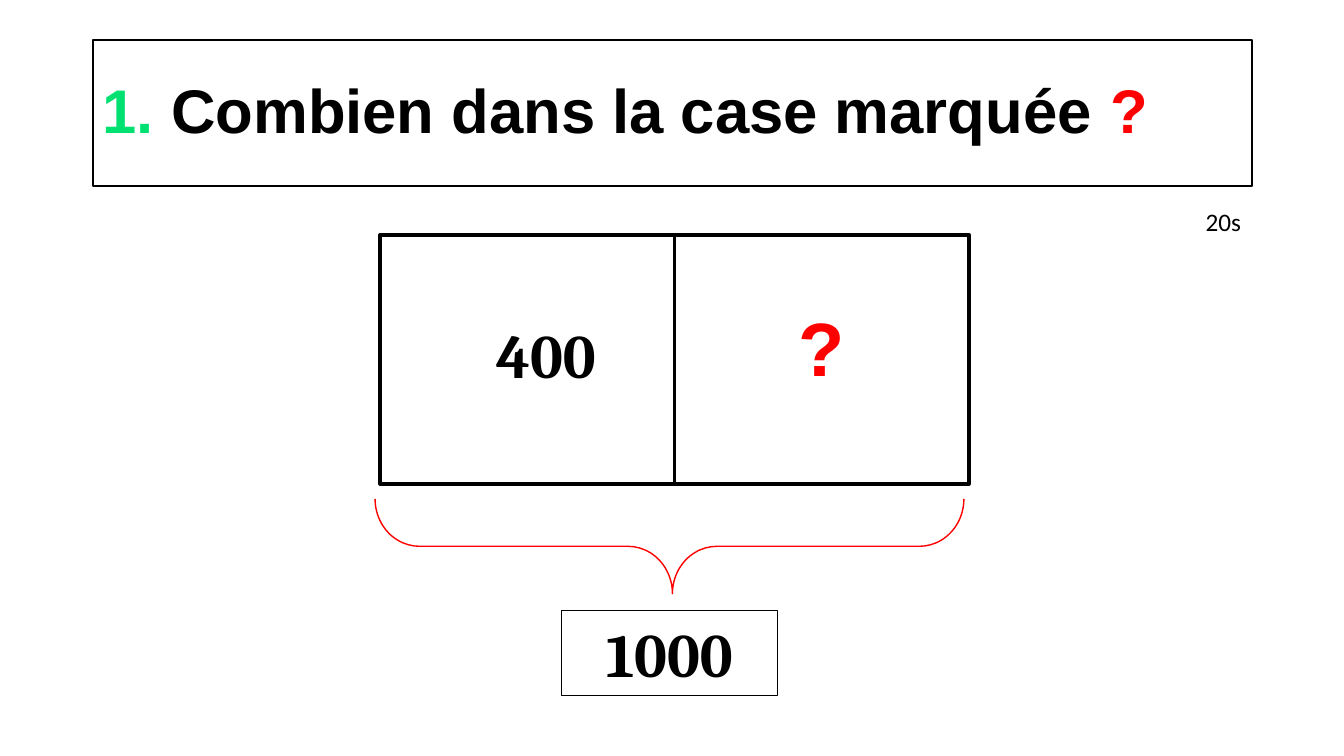
from dataclasses import dataclass

from pptx import Presentation
from pptx.dml.color import RGBColor
from pptx.enum.shapes import MSO_SHAPE as Shape
from pptx.enum.text import MSO_ANCHOR as Anchor, PP_ALIGN as Align
from pptx.util import Emu, Pt

PX = 9144  # 100 px to the inch


@dataclass(frozen=True)
class Theme:
    black: RGBColor = RGBColor(0x00, 0x00, 0x00)
    red: RGBColor = RGBColor(0xFF, 0x00, 0x00)
    green: RGBColor = RGBColor(0x00, 0xE1, 0x72)
    heading_font: str = "Arial"
    number_font: str = "Cambria"
    note_font: str = "Calibri"
    large: int = 44
    mark: int = 54
    note: int = 18


class SlideBuilder:
    def __init__(self, slide, theme):
        self.slide = slide
        self.theme = theme

    def outline(self, kind, box, color, weight):
        """Add an unfilled preset shape; box is left, top, width, height in px."""
        shape = self.slide.shapes.add_shape(kind, *(Emu(n * PX) for n in box))
        shape.shadow.inherit = False
        shape.fill.background()
        shape.line.color.rgb = color
        shape.line.width = Pt(weight)
        return shape

    def text(self, box, runs, font, size, bold=True, align=Align.CENTER,
             anchor=Anchor.TOP, wrap=True, spacing=1.0, border=None):
        """Add a text box from (text, color) runs, with an optional black border."""
        shape = self.slide.shapes.add_textbox(*(Emu(n * PX) for n in box))
        if border:
            shape.line.color.rgb = self.theme.black
            shape.line.width = Pt(border)
        frame = shape.text_frame
        frame.word_wrap = wrap
        frame.vertical_anchor = anchor
        paragraph = frame.paragraphs[0]
        paragraph.alignment = align
        paragraph.line_spacing = spacing
        for words, color in runs:
            run = paragraph.add_run()
            run.text = words
            run.font.name = font
            run.font.size = Pt(size)
            run.font.bold = bold
            run.font.color.rgb = color

    def brace_below(self, box):
        """Add a downward brace; box is the area it covers once turned."""
        left, top, width, height = box
        shift = (width - height) // 2
        brace = self.outline(Shape.RIGHT_BRACE,
                             (left + shift, top - shift, height, width),
                             self.theme.red, 1)
        brace.rotation = 90
        brace.adjustments[0] = 0.47
        brace.adjustments[1] = 0.495


def main():
    presentation = Presentation()
    presentation.slide_width = Emu(1333 * PX)
    presentation.slide_height = Emu(750 * PX)
    slide = presentation.slides.add_slide(presentation.slide_layouts[6])
    theme = Theme()
    builder = SlideBuilder(slide, theme)

    title = [("1. ", theme.green),
             ("Combien dans la case marquée ", theme.black),
             ("?", theme.red)]
    builder.text((92, 40, 1150, 145), title, theme.heading_font, theme.large,
                 align=Align.LEFT, anchor=Anchor.MIDDLE, spacing=0.9, border=1.5)

    cell_width = 292
    for column in range(2):
        builder.outline(Shape.RECTANGLE,
                        (377 + column * cell_width, 233, cell_width, 247),
                        theme.black, 2.5)
    builder.text((470, 310, 143, 86), [("400", theme.black)],
                 theme.number_font, theme.large)
    builder.brace_below((372, 495, 2 * cell_width, 94))
    builder.text((557, 606, 214, 84), [("1000", theme.black)],
                 theme.number_font, theme.large, border=0.75)
    builder.text((737, 294, 156, 101), [("?", theme.red)],
                 theme.heading_font, theme.mark)
    builder.text((1186, 200, 56, 40), [("20s", theme.black)], theme.note_font,
                 theme.note, bold=False, align=Align.LEFT, wrap=False)

    presentation.save("out.pptx")


if __name__ == "__main__":
    main()
